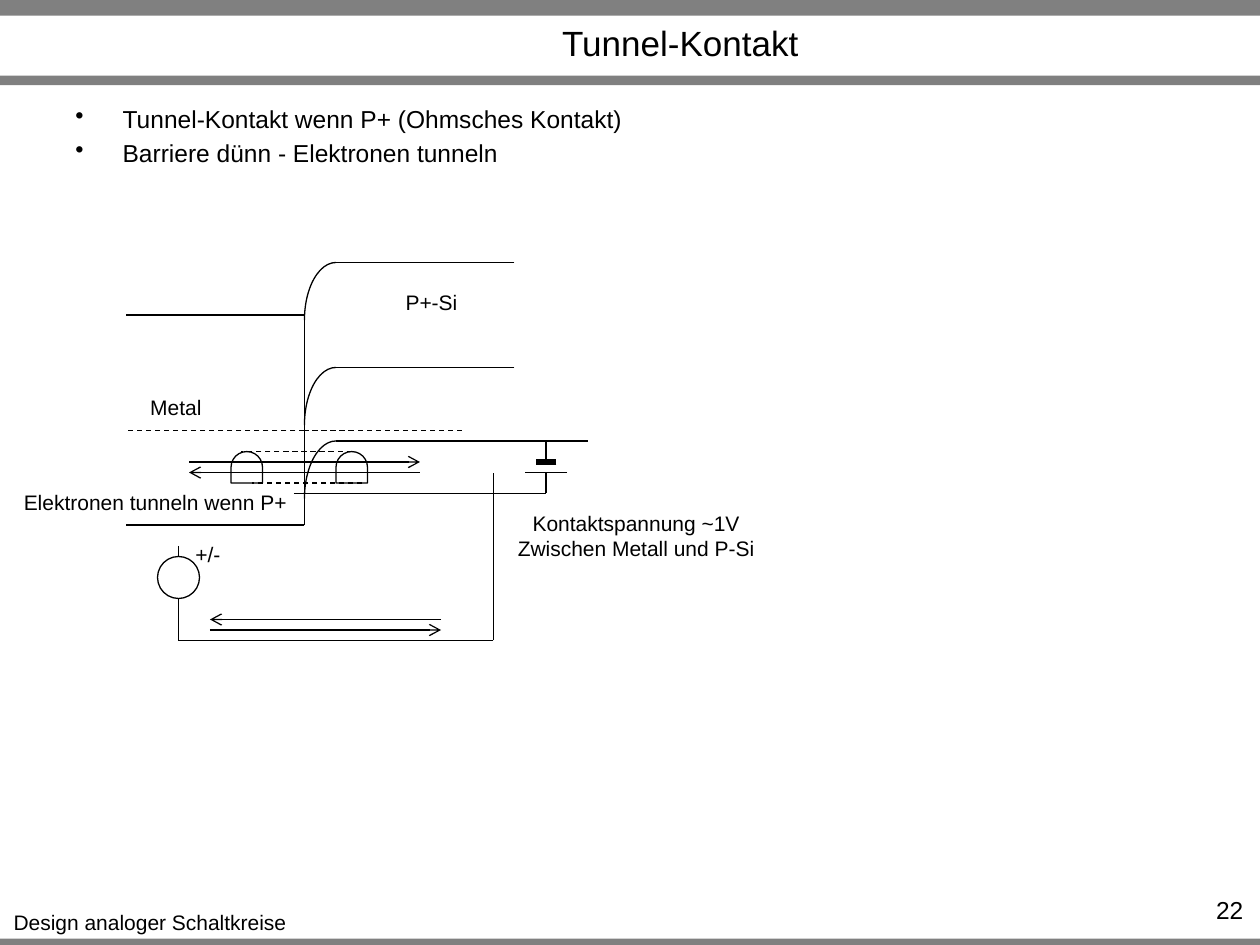
"""Build the slide on the tunnel contact: band diagram, circuit and labels."""
from pptx import Presentation
from pptx.dml.color import RGBColor
from pptx.enum.dml import MSO_LINE
from pptx.enum.shapes import MSO_CONNECTOR, MSO_SHAPE
from pptx.enum.text import MSO_ANCHOR, MSO_AUTO_SIZE, PP_ALIGN
from pptx.oxml.ns import qn
from pptx.util import Pt
from lxml.etree import SubElement

PX = 7620
BLACK = "000000"
GRAY = "808080"


def add_line(shapes, x1, y1, x2, y2, width=0.75, dashed=False, arrow=False):
    line = shapes.add_connector(MSO_CONNECTOR.STRAIGHT, x1 * PX, y1 * PX, x2 * PX, y2 * PX)
    line.line.color.rgb = RGBColor.from_string(BLACK)
    line.line.width = Pt(width)
    if dashed:
        line.line.dash_style = MSO_LINE.DASH
    if arrow:
        SubElement(line.line._get_or_add_ln(), qn("a:tailEnd"), type="arrow")
    SubElement(line._element.spPr, qn("a:effectLst"))


def add_text(left, top, width, height, text, size=12, align=PP_ALIGN.CENTER, wrap=False):
    box = slide.shapes.add_textbox(left * PX, top * PX, width * PX, height * PX)
    text_frame = box.text_frame
    text_frame.word_wrap = wrap
    text_frame.auto_size = MSO_AUTO_SIZE.NONE if wrap else MSO_AUTO_SIZE.SHAPE_TO_FIT_TEXT
    text_frame.text = text
    for paragraph in text_frame.paragraphs:
        paragraph.alignment = align
        for run in paragraph.runs:
            run.font.name = "Arial"
            run.font.size = Pt(size)
            run.font.color.rgb = RGBColor.from_string(BLACK)
    return text_frame


presentation = Presentation()
presentation.slide_width = 1200 * PX
presentation.slide_height = 900 * PX
slide = presentation.slides.add_slide(presentation.slide_layouts[6])
shapes = slide.shapes

for top, height in [(894, 10), (0, 15), (72, 9)]:
    bar = shapes.add_shape(MSO_SHAPE.RECTANGLE, 0, top * PX, 1200 * PX, height * PX)
    bar.shadow.inherit = False
    bar.fill.solid()
    bar.fill.fore_color.rgb = RGBColor.from_string(GRAY)
    bar.line.fill.background()

add_text(0, 860, 286, 36, "Design analoger Schaltkreise")
title = add_text(156, 17, 984, 46, "Tunnel-Kontakt", 20, wrap=True)
title.vertical_anchor = MSO_ANCHOR.MIDDLE
add_text(1092, 847, 104, 29, "22", 14, PP_ALIGN.RIGHT, True)

bullets = add_text(
    60, 93, 1080, 59,
    "Tunnel-Kontakt wenn P+ (Ohmsches Kontakt)\nBarriere dünn - Elektronen tunneln",
    14, PP_ALIGN.LEFT, True,
)
for paragraph in bullets.paragraphs:
    properties = paragraph._p.get_or_add_pPr()
    properties.set("marL", str(45 * PX))
    properties.set("indent", str(-45 * PX))
    SubElement(properties, qn("a:buChar"), char="•")
bullets.paragraphs[1].space_before = Pt(2.8)

outlines = [
    (MSO_SHAPE.FLOWCHART_DELAY, 320, 430, 30, 30),
    (MSO_SHAPE.FLOWCHART_DELAY, 220, 430, 30, 30),
    (MSO_SHAPE.OVAL, 150, 530, 40, 40),
    (MSO_SHAPE.ARC, 290, 350, 60, 110),
    (MSO_SHAPE.ARC, 290, 420, 60, 110),
    (MSO_SHAPE.ARC, 290, 250, 60, 110),
]
for kind, left, top, width, height in outlines:
    shape = shapes.add_shape(kind, left * PX, top * PX, width * PX, height * PX)
    shape.shadow.inherit = False
    shape.fill.background()
    shape.line.color.rgb = RGBColor.from_string(BLACK)
    shape.line.width = Pt(0.75)
    if kind == MSO_SHAPE.FLOWCHART_DELAY:
        shape.rotation = 270
    if kind == MSO_SHAPE.ARC:
        shape._element.spPr.xfrm.set("flipH", "1")

band_lines = [
    (290, 500, 290, 300), (290, 500, 290, 470), (290, 500, 120, 500), (290, 300, 120, 300),
    (560, 420, 320, 420), (490, 350, 320, 350), (490, 250, 320, 250),
]
circuit_lines = [
    (170, 580, 170, 610), (170, 570, 170, 600), (170, 520, 170, 530),
    (170, 610, 470, 610), (470, 610, 470, 450), (280, 470, 520, 470),
]
for ends in band_lines + circuit_lines:
    add_line(shapes, *ends)

for ends in [(290, 410, 120, 410), (440, 410, 290, 410), (335, 430, 230, 430), (345, 460, 240, 460)]:
    add_line(shapes, *ends, dashed=True)

for ends in [(180, 440, 400, 440), (400, 450, 180, 450), (420, 590, 200, 590), (200, 600, 420, 600)]:
    add_line(shapes, *ends, arrow=True)

battery = shapes.add_group_shape()
add_line(battery.shapes, 540, 450, 500, 450)
add_line(battery.shapes, 530, 440, 510, 440, width=3.5)
add_line(battery.shapes, 520, 450, 520, 470)
add_line(battery.shapes, 520, 420, 520, 440)

labels = [
    (131, 370, 73, 36, "Metal"),
    (374, 270, 74, 36, "P+-Si"),
    (10, 460, 276, 36, "Elektronen tunneln wenn P+"),
    (174, 510, 48, 36, "+/-"),
    (480, 480, 252, 60, "Kontaktspannung ~1V\nZwischen Metall und P-Si"),
]
for label in labels:
    add_text(*label)

presentation.save("out.pptx")
